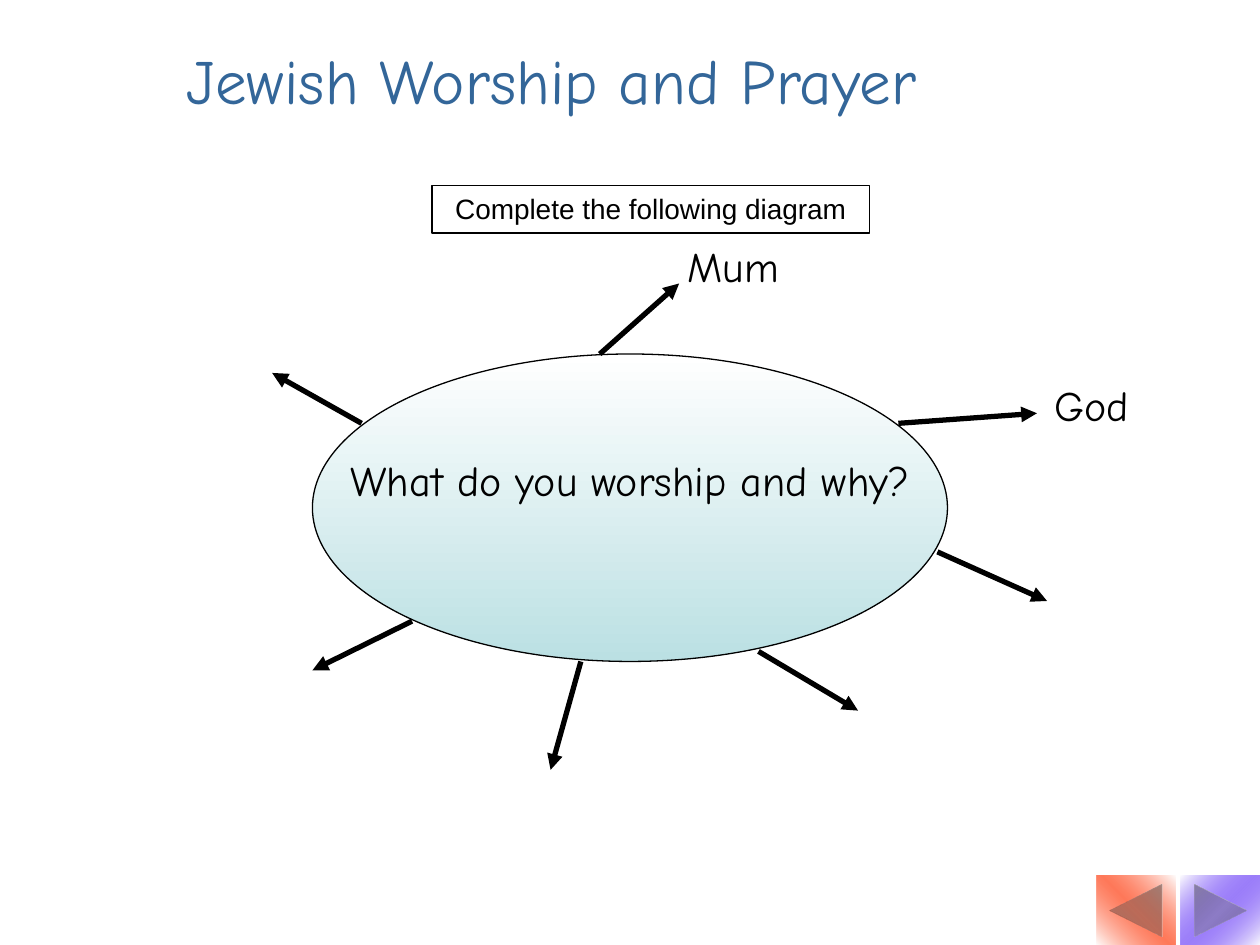
from lxml.etree import SubElement
from pptx import Presentation
from pptx.dml.color import RGBColor
from pptx.enum.shapes import MSO_CONNECTOR, MSO_SHAPE
from pptx.enum.text import MSO_ANCHOR, PP_ALIGN
from pptx.oxml.ns import qn
from pptx.util import Inches, Pt

BLACK = RGBColor(0x00, 0x00, 0x00)
WHITE = RGBColor(0xFF, 0xFF, 0xFF)
NAVY = RGBColor(0x33, 0x66, 0x99)
AQUA = RGBColor(0xBB, 0xE0, 0xE3)
VIOLET = RGBColor(0x42, 0x0A, 0xF6)
RED = RGBColor(0xFF, 0x31, 0x01)

# Arrows around the oval: start x, y and end x, y
ARROWS = [
    (7.13, 3.36, 8.23, 3.28),
    (6.02, 5.17, 6.81, 5.64),
    (3.27, 4.93, 2.48, 5.32),
    (2.87, 3.36, 2.16, 2.96),
    (4.76, 2.81, 5.39, 2.25),
    (4.61, 5.25, 4.37, 6.11),
    (7.44, 4.38, 8.31, 4.77),
]


def set_text(shape, text, size=24, font="Comic Neue", color=BLACK,
             align=PP_ALIGN.CENTER, anchor=MSO_ANCHOR.TOP, wrap=True):
    frame = shape.text_frame
    frame.text = text
    frame.word_wrap = wrap
    frame.vertical_anchor = anchor
    par = frame.paragraphs[0]
    par.alignment = align
    par.font.size = Pt(size)
    par.font.name = font
    par.font.color.rgb = color
    return par


def add_label(slide, box, text, **style):
    label = slide.shapes.add_textbox(*map(Inches, box))
    set_text(label, text, **style)
    return label


def set_line(shape, width):
    shape.line.color.rgb = BLACK
    shape.line.width = Pt(width)


def set_blend(shape, angle, stops):
    """Fill with a linear gradient; each stop is (percent, color, opacity)."""
    shape.fill.gradient()
    grad = shape._element.spPr.find(qn("a:gradFill"))
    items = grad.find(qn("a:gsLst"))
    for old in list(items):
        items.remove(old)
    for place, color, alpha in stops:
        stop = SubElement(items, qn("a:gs"), pos=str(place * 1000))
        tint = SubElement(stop, qn("a:srgbClr"), val=str(color))
        if alpha < 100:
            SubElement(tint, qn("a:alpha"), val=str(alpha * 1000))
    grad.find(qn("a:lin")).set("ang", str(angle * 60000))


def add_shape(slide, kind, box, angle, stops):
    shape = slide.shapes.add_shape(kind, *map(Inches, box))
    shape.shadow.inherit = False
    set_blend(shape, angle, stops)
    return shape


def add_arrow(slide, ends):
    arrow = slide.shapes.add_connector(MSO_CONNECTOR.STRAIGHT,
                                       *map(Inches, ends))
    set_line(arrow, 3)
    SubElement(arrow.line._get_or_add_ln(), qn("a:tailEnd"), type="triangle")
    SubElement(arrow._element.spPr, qn("a:effectLst"))


def add_button(slide, left, color, alpha, flip=False):
    button = add_shape(slide, MSO_SHAPE.ACTION_BUTTON_FORWARD_OR_NEXT,
                       (left, 6.95, 0.63, 0.55), 45,
                       [(0, WHITE, 100), (50, color, alpha), (100, WHITE, 100)])
    button.line.fill.background()
    if flip:
        button._element.spPr.find(qn("a:xfrm")).set("flipH", "1")


def main():
    deck = Presentation()
    deck.slide_width, deck.slide_height = Inches(10), Inches(7.5)
    slide = deck.slides.add_slide(deck.slide_layouts[5])

    # Title
    title = slide.shapes.title
    title.left, title.top = Inches(1.38), Inches(0.28)
    title.width, title.height = Inches(7.63), Inches(1.1)
    set_text(title, "Jewish Worship and Prayer", size=36, color=NAVY,
             align=PP_ALIGN.LEFT)

    # Central question, raised above the middle of the oval
    oval = add_shape(slide, MSO_SHAPE.OVAL, (2.48, 2.81, 5.04, 2.44), 90,
                     [(0, WHITE, 100), (100, AQUA, 100)])
    set_line(oval, 0.75)
    par = set_text(oval, "What do you worship and why?",
                   anchor=MSO_ANCHOR.MIDDLE, wrap=False)
    par.line_spacing = 0.8
    oval.text_frame.margin_bottom = Inches(0.42)

    # Arrows and sample answers
    for ends in ARROWS:
        add_arrow(slide, ends)
    add_label(slide, (5.31, 1.86, 1.02, 0.5), "Mum")
    add_label(slide, (8.23, 2.96, 0.87, 0.5), "God")

    # Navigation buttons
    add_button(slide, 9.37, VIOLET, 52)
    add_button(slide, 8.7, RED, 65, flip=True)

    # Instruction
    task = add_label(slide, (3.43, 1.47, 3.47, 0.38),
                     "Complete the following diagram", size=16, font="Arial")
    set_line(task, 0.75)

    deck.save("out.pptx")


if __name__ == "__main__":
    main()
